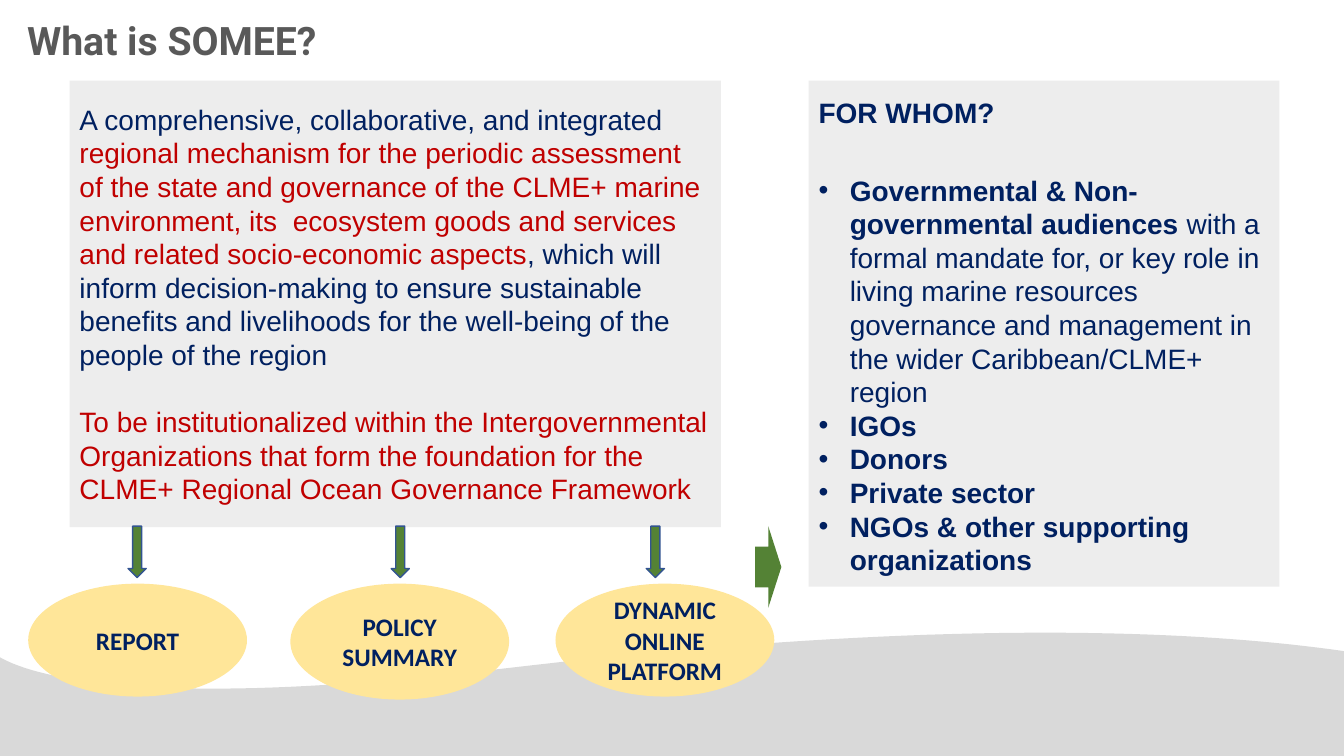
from lxml import etree
from pptx import Presentation
from pptx.dml.color import RGBColor
from pptx.enum.shapes import MSO_SHAPE
from pptx.enum.text import MSO_ANCHOR, PP_ALIGN
from pptx.oxml.ns import qn
from pptx.util import Inches, Pt

RECT, OVAL = MSO_SHAPE.RECTANGLE, MSO_SHAPE.OVAL
DOWN, RIGHT = MSO_SHAPE.DOWN_ARROW, MSO_SHAPE.RIGHT_ARROW
TOP, MIDDLE = MSO_ANCHOR.TOP, MSO_ANCHOR.MIDDLE
LEFT, CENTER = PP_ALIGN.LEFT, PP_ALIGN.CENTER
NAVY, RED, GREEN = "002060", "C00000", "548235"
GRAY, SAND = "EDEDED", "FFE699"


def paint(shape, fill, line=None):
    shape.shadow.inherit = False
    shape.fill.solid()
    shape.fill.fore_color.rgb = RGBColor.from_string(fill)
    if line:
        shape.line.color.rgb = RGBColor.from_string(line)
        shape.line.width = Pt(1)
    else:
        shape.line.fill.background()


def write(shape, paras, size=20, font="Arial", align=LEFT, anchor=TOP):
    """Each paragraph: (runs, format); each run: (text, color, bold)."""
    frame = shape.text_frame
    frame.word_wrap = True
    frame.vertical_anchor = anchor
    for i, (runs, style) in enumerate(paras):
        para = frame.add_paragraph() if i else frame.paragraphs[0]
        para.alignment = align
        if "pitch" in style:
            para.line_spacing = Pt(style["pitch"])
        para.space_after = Pt(style.get("after", 0))
        if style.get("bullet"):
            props = para._p.get_or_add_pPr()
            props.set("marL", str(Inches(0.31)))
            props.set("indent", str(-Inches(0.31)))
            etree.SubElement(props, qn("a:buFont")).set("typeface", "Arial")
            etree.SubElement(props, qn("a:buChar")).set("char", "•")
        for text, color, bold in runs:
            run = para.add_run()
            run.text = text
            run.font.name = font
            run.font.size = Pt(size)
            run.font.bold = bold
            run.font.color.rgb = RGBColor.from_string(color)


deck = Presentation()
deck.slide_width, deck.slide_height = Inches(13.33), Inches(7.5)
slide = deck.slides.add_slide(deck.slide_layouts[6])
shapes = slide.shapes

# Wave along the bottom, curves sampled into short lines
curves = [
    [(13.33, 6.46), (11.65, 6.22), (9.02, 6.16), (5.02, 6.63)],
    [(5.02, 6.63), (1.33, 7.07), (0.26, 6.68), (-0.02, 6.51)],
]
steps = 40
points = [(13.33, 6.46)]
for curve in curves:
    for n in range(1, steps + 1):
        t = n / steps
        parts = [(1 - t) ** 3, 3 * t * (1 - t) ** 2, 3 * t ** 2 * (1 - t), t ** 3]
        points.append(tuple(sum(w * p[k] for w, p in zip(parts, curve)) for k in (0, 1)))
points.append((-0.02, 7.5))
path = shapes.build_freeform(Inches(13.33), Inches(7.5))
path.add_line_segments([(Inches(x), Inches(y)) for x, y in points], close=True)
paint(path.convert_to_shape(), "D9D9D9")

# Title
title = shapes.add_textbox(Inches(0.17), Inches(0.02), Inches(12.86), Inches(0.62))
write(title, [([("What is SOMEE?", "595959", True)], {"pitch": 40})], size=28, font="Roboto")

# Definition panel
about = shapes.add_shape(RECT, Inches(0.69), Inches(0.8), Inches(6.46), Inches(4.43))
paint(about, GRAY)
write(about, [
    ([("A comprehensive, collaborative, and integrated ", NAVY, False),
      ("regional mechanism for the periodic assessment of the state and governance "
       "of the CLME+ marine environment, its  ecosystem goods and services and "
       "related socio-economic aspects", RED, False),
      (", which will inform decision-making to ensure sustainable benefits and "
       "livelihoods for the well-being of the people of the region", NAVY, False)],
     {"pitch": 24, "after": 24}),
    ([("To be institutionalized within the Intergovernmental Organizations that form "
       "the foundation for the CLME+ Regional Ocean Governance Framework", RED, False)],
     {"pitch": 24}),
], anchor=MIDDLE)

# Audience panel
whom = shapes.add_shape(RECT, Inches(8.02), Inches(0.8), Inches(4.67), Inches(5.02))
paint(whom, GRAY)
item = {"pitch": 24, "bullet": True}
groups = ["IGOs", "Donors", "Private sector", "NGOs & other supporting organizations"]
write(whom, [
    ([("FOR WHOM?", NAVY, True)], {"pitch": 31.2, "after": 31.2}),
    ([("Governmental & Non-governmental audiences ", NAVY, True),
      ("with a formal mandate for, or key role in living marine resources governance "
       "and management in the wider Caribbean/CLME+ region", NAVY, False)], item),
] + [([(name, NAVY, True)], item) for name in groups])

# Products, each with its arrow: label, oval left, oval height, arrow left
products = [
    ("REPORT", 0.28, 1.12, 1.27),
    ("POLICY SUMMARY", 2.88, 1.15, 3.88),
    ("DYNAMIC ONLINE PLATFORM", 5.51, 1.12, 6.41),
]
for label, left, high, tip in products:
    arrow = shapes.add_shape(DOWN, Inches(tip), Inches(5.22), Inches(0.18), Inches(0.51))
    paint(arrow, GREEN, "325491")
    oval = shapes.add_shape(OVAL, Inches(left), Inches(5.79), Inches(2.17), Inches(high))
    paint(oval, SAND)
    write(oval, [([(label, NAVY, True)], {})], size=18, font="Calibri",
          align=CENTER, anchor=MIDDLE)

# Arrow towards the audience
arrow = shapes.add_shape(RIGHT, Inches(7.49), Inches(5.22), Inches(0.26), Inches(0.81))
paint(arrow, GREEN)

deck.save("out.pptx")
